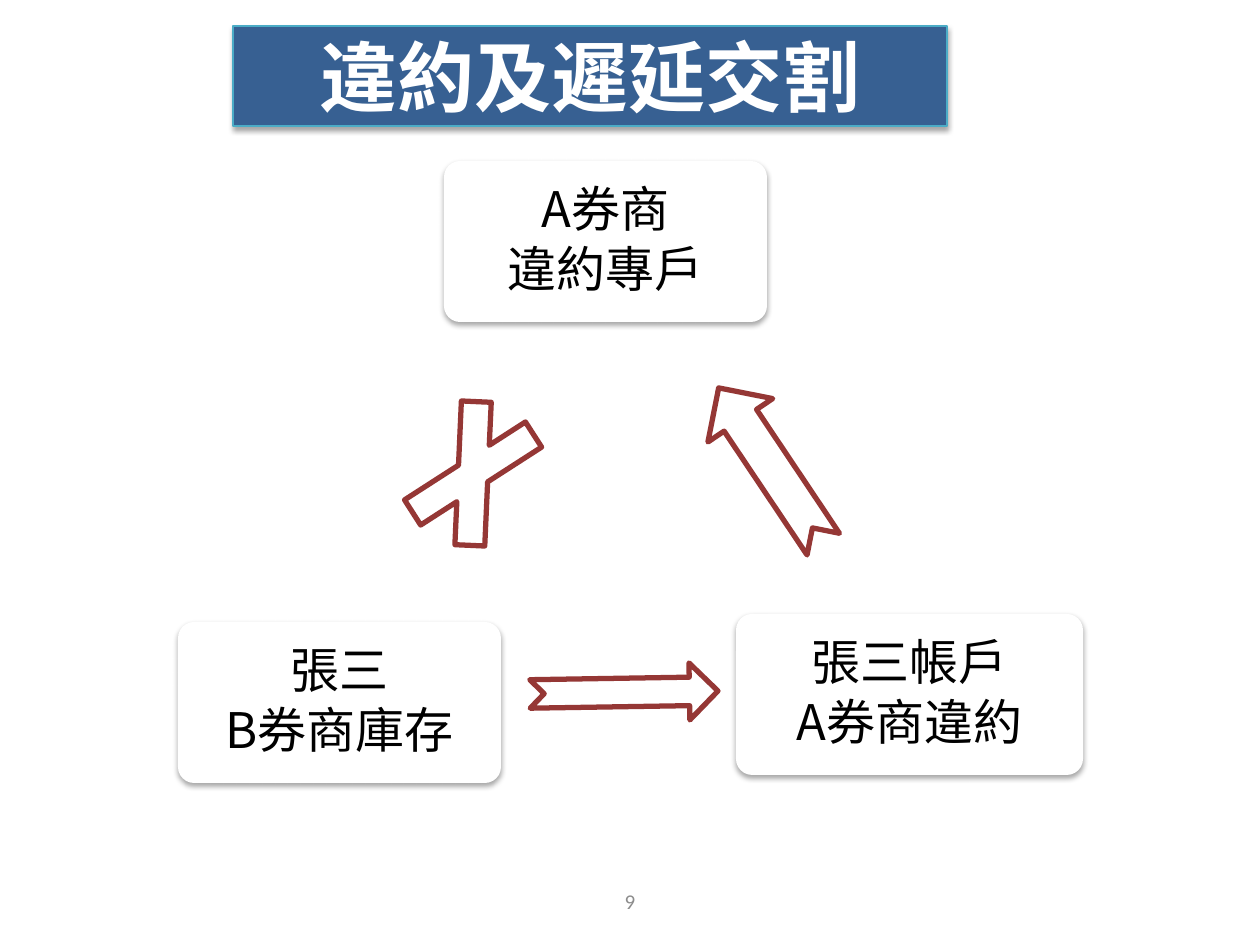
from lxml import etree
from pptx import Presentation, util as u
from pptx.dml.color import RGBColor
from pptx.enum import shapes, text
from pptx.oxml import ns

PX = 914400 / 126
COLORS = {"title": "376092", "edge": "4BACC6", "white": "FFFFFF",
          "ink": "000000", "arrow": "953735", "page": "8C8C8C"}
CJK = "Noto Sans CJK SC"
KIND = shapes.MSO_SHAPE


def px(n):
    return u.Emu(round(n * PX))


def rgb(name):
    return RGBColor.from_string(COLORS[name])


def add_shadow(sp):
    lst = sp._element.spPr.find(ns.qn("a:effectLst"))
    shadow = etree.SubElement(lst, ns.qn("a:outerShdw"), blurRad="40000",
                              dist="23000", dir="5400000", rotWithShape="0")
    color = etree.SubElement(shadow, ns.qn("a:srgbClr"), val=COLORS["ink"])
    etree.SubElement(color, ns.qn("a:alpha"), val="35000")


def write(sp, lines, size, color, font=CJK, bold=False, inset=0,
          spacing=None, after=None):
    tf = sp.text_frame
    tf.word_wrap = True
    tf.vertical_anchor = text.MSO_ANCHOR.MIDDLE
    tf.margin_left = tf.margin_right = tf.margin_top = tf.margin_bottom = px(inset)
    for i, line in enumerate(lines):
        p = tf.paragraphs[0] if i == 0 else tf.add_paragraph()
        p.alignment = text.PP_ALIGN.CENTER
        p.line_spacing = spacing
        p.space_after = after
        r = p.add_run()
        r.text = line
        r.font.name, r.font.size, r.font.bold = font, u.Pt(size), bold
        r.font.color.rgb = rgb(color)
        etree.SubElement(r._r.get_or_add_rPr(), ns.qn("a:ea"), typeface=font)


def add_shape(s, kind, box, fill=None, line=None, width=1, rot=0):
    sp = s.shapes.add_shape(kind, *map(px, box))
    sp.shadow.inherit = False
    sp.rotation = rot
    if fill:
        sp.fill.solid()
        sp.fill.fore_color.rgb = rgb(fill)
    else:
        sp.fill.background()
    if line:
        sp.line.color.rgb = rgb(line)
        sp.line.width = u.Pt(width)
    else:
        sp.line.fill.background()
    return sp


def add_title(s, title):
    sp = add_shape(s, KIND.RECTANGLE, (233, 26, 714, 100), "title", "edge")
    add_shadow(sp)
    write(sp, [title], 44, "white", bold=True)


def add_card(s, x, y, w, lines):
    sp = add_shape(s, KIND.ROUNDED_RECTANGLE, (x, y, w, 161), "white")
    sp.adjustments[0] = 0.1
    add_shadow(sp)
    write(sp, lines, 28, "ink", inset=15, spacing=0.9, after=u.Pt(4))


def add_mark(s, kind, box, rot):
    add_shape(s, kind, box, line="arrow", width=3, rot=rot)


def add_page_number(s, number):
    sp = s.shapes.add_textbox(*map(px, (483, 876, 294, 50)))
    write(sp, [number], 12, "page", font="Calibri")


def main():
    """Build the default and late settlement slide."""
    prs = Presentation()
    prs.slide_width, prs.slide_height = px(1260), px(945)
    s = prs.slides.add_slide(prs.slide_layouts[6])
    add_page_number(s, "9")
    for card in ((444, 161, 323, ["A券商", "違約專戶"]),
                 (178, 622, 323, ["張三", "B券商庫存"]),
                 (736, 614, 347, ["張三帳戶", "A券商違約"])):
        add_card(s, *card)
    add_mark(s, KIND.MATH_MULTIPLY, (350, 410, 246, 127), 119.9)
    add_mark(s, KIND.NOTCHED_RIGHT_ARROW, (530, 664, 188, 57), 359.1)
    add_mark(s, KIND.NOTCHED_RIGHT_ARROW, (677, 427, 188, 78), 236.2)
    add_title(s, "違約及遲延交割")
    prs.save("out.pptx")


if __name__ == "__main__":
    main()
